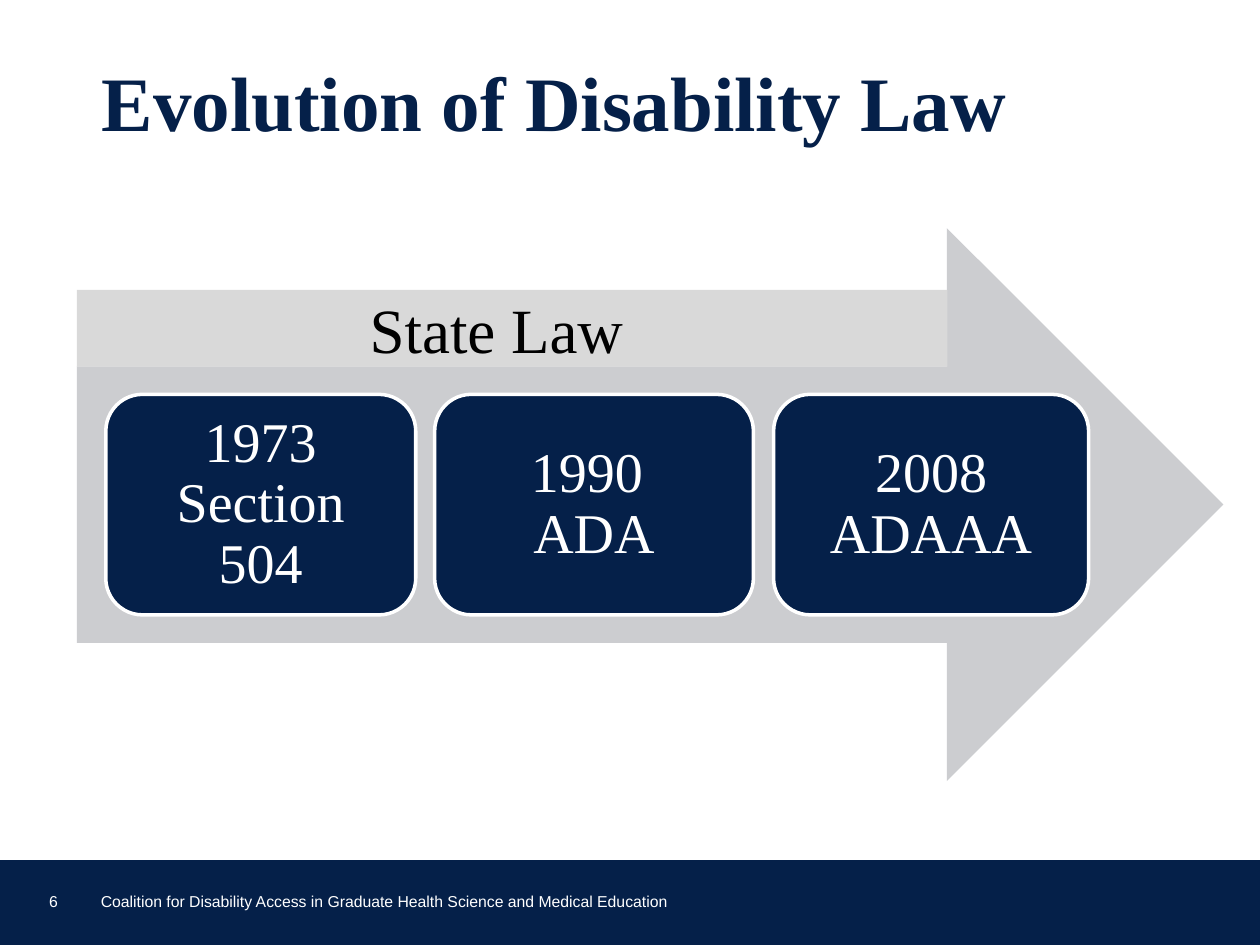
from pptx import Presentation
from pptx.dml.color import RGBColor
from pptx.enum import shapes, text
from pptx.util import Inches, Pt

NAVY = RGBColor(0x05, 0x20, 0x49)
WHITE = RGBColor(0xFF, 0xFF, 0xFF)
BLACK = RGBColor(0x00, 0x00, 0x00)
ARROW_GRAY = RGBColor(0xCC, 0xCD, 0xD0)
BAND_GRAY = RGBColor(0xD9, 0xD9, 0xD9)
SERIF = "Times New Roman"

deck = Presentation()
deck.slide_width, deck.slide_height = Inches(10), Inches(7.5)
page = deck.slides.add_slide(deck.slide_layouts[6])


def add_block(kind, left, top, width, height, fill, line=None, weight=1.5):
    block = page.shapes.add_shape(
        kind, Inches(left), Inches(top), Inches(width), Inches(height))
    block.shadow.inherit = False
    block.fill.solid()
    block.fill.fore_color.rgb = fill
    if line is None:
        block.line.fill.background()
    else:
        block.line.color.rgb = line
        block.line.width = Pt(weight)
    return block


def write(box, words, font, size, color, align=text.PP_ALIGN.LEFT,
          anchor=text.MSO_ANCHOR.MIDDLE, inset=0, spacing=1.0, bold=False):
    frame = box.text_frame
    frame.text = words
    frame.word_wrap = True
    frame.vertical_anchor = anchor
    frame.margin_left = frame.margin_right = Inches(inset)
    frame.margin_top = frame.margin_bottom = Inches(inset)
    for para in frame.paragraphs:
        para.alignment = align
        para.line_spacing = spacing
        for span in para.runs:
            span.font.name = font
            span.font.size = Pt(size)
            span.font.bold = bold
            span.font.color.rgb = color


add_block(shapes.MSO_SHAPE.RECTANGLE, 0, 6.84, 10, 0.66, NAVY, NAVY)

title = page.shapes.add_textbox(Inches(0.71), Inches(0.48), Inches(8.85), Inches(0.75))
write(title, "Evolution of Disability Law", SERIF, 44, NAVY,
      inset=0.05, spacing=0.85, bold=True)
title.text_frame.margin_left = title.text_frame.margin_right = Inches(0.1)

add_block(shapes.MSO_SHAPE.RIGHT_ARROW, 0.61, 1.81, 9.1, 4.39, ARROW_GRAY)

milestones = [
    (0.84, 2.46, "1973 Section 504"),
    (3.45, 2.53, "1990 \nADA"),
    (6.14, 2.5, "2008 ADAAA"),
]
for left, width, words in milestones:
    card = add_block(shapes.MSO_SHAPE.ROUNDED_RECTANGLE, left, 3.13, width, 1.75,
                     NAVY, WHITE, 2)
    write(card, words, SERIF, 32, WHITE, text.PP_ALIGN.CENTER, inset=0.13, spacing=0.9)

band = add_block(shapes.MSO_SHAPE.RECTANGLE, 0.61, 2.3, 6.91, 0.61, BAND_GRAY)
write(band, "State Law", SERIF, 36, BLACK, text.PP_ALIGN.CENTER)
band.text_frame.margin_right = Inches(0.25)

footers = [
    (0.39, 7.06, 0.27, 0.17, "6"),
    (0.8, 7.08, 4.71, 0.15,
     "Coalition for Disability Access in Graduate Health Science and Medical Education"),
]
for left, top, width, height, words in footers:
    footer = page.shapes.add_textbox(
        Inches(left), Inches(top), Inches(width), Inches(height))
    write(footer, words, "Arial", 9, WHITE, anchor=text.MSO_ANCHOR.BOTTOM)

deck.save("out.pptx")
